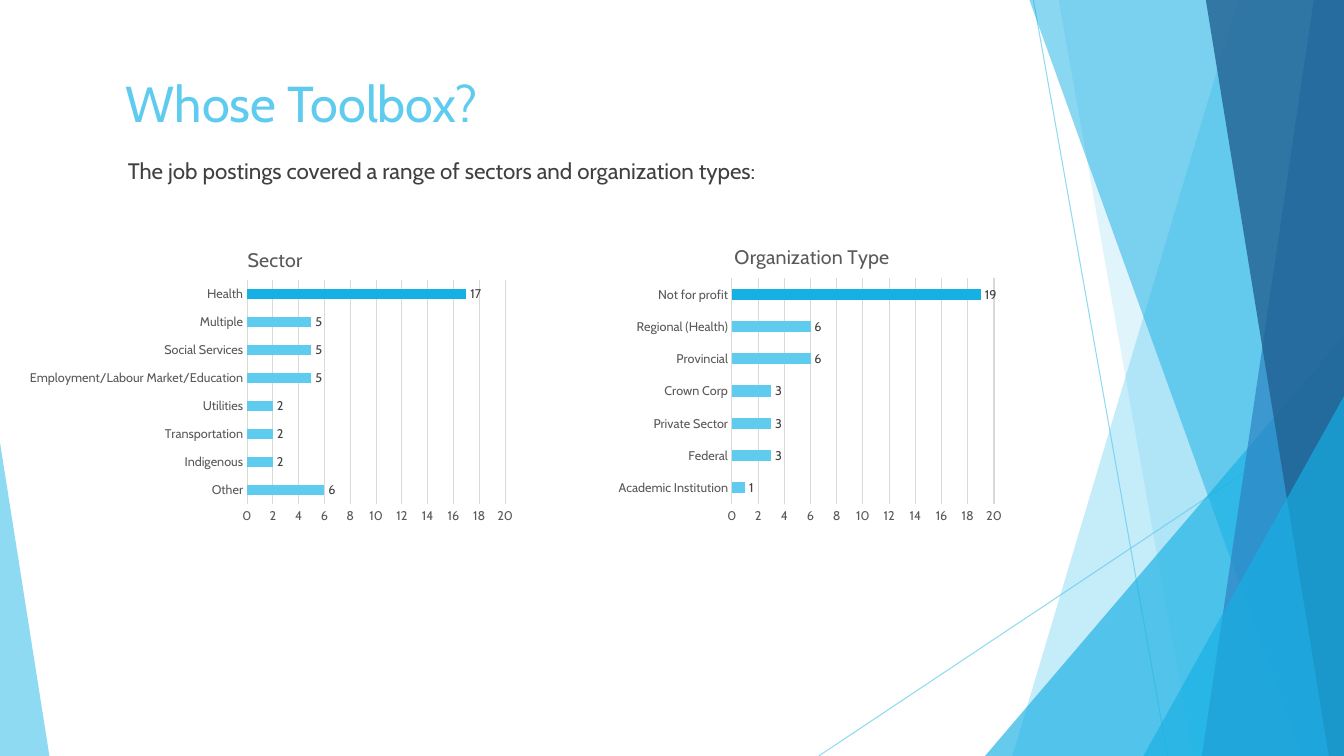
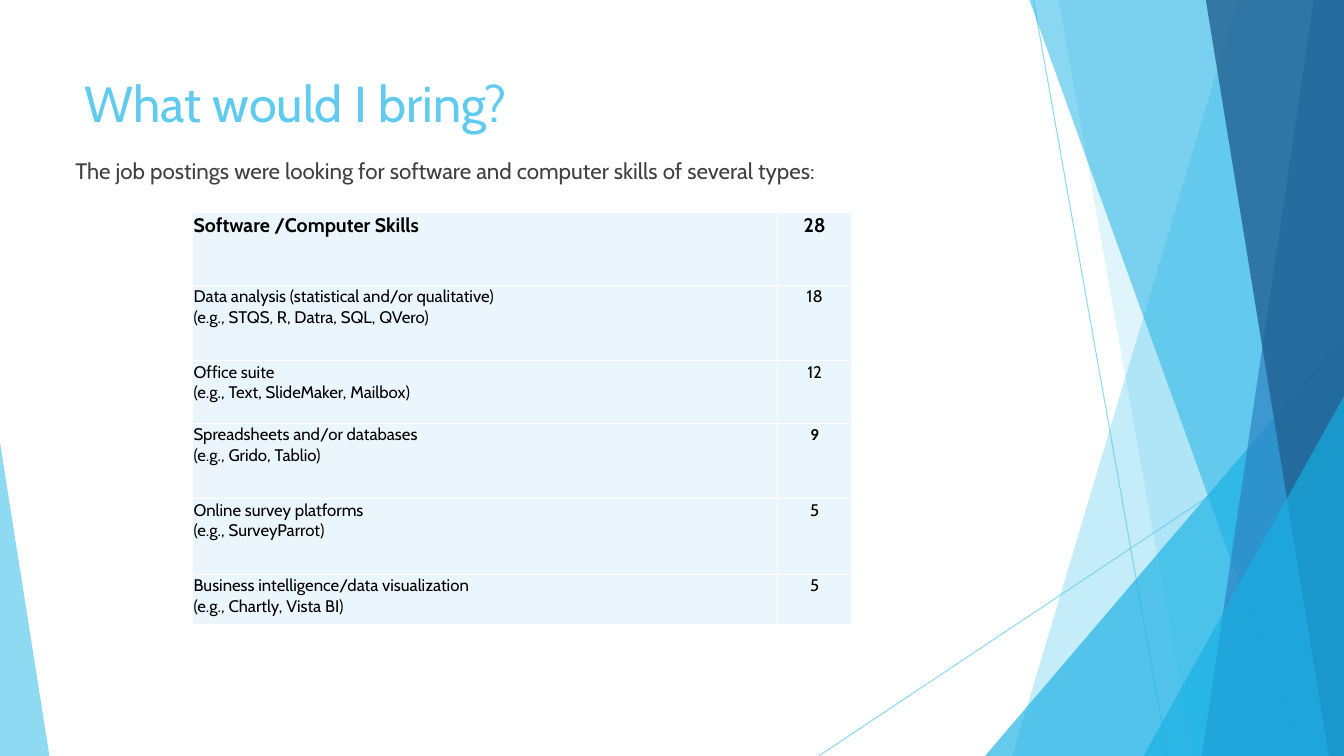
import dataclasses

import lxml.etree
import pptx
import pptx.chart.data
import pptx.dml.color
import pptx.enum.chart
import pptx.enum.shapes
import pptx.enum.text
import pptx.oxml.ns
import pptx.util

Inches = pptx.util.Inches
Pt = pptx.util.Pt
qn = pptx.oxml.ns.qn


@dataclasses.dataclass(frozen=True)
class Theme:
    width: float = 13.33
    height: float = 7.5
    font: str = "Cabin"
    number_font: str = "Calibri"
    sky: str = "5FCBEF"
    cyan: str = "17B0E4"
    blue: str = "2E83C3"
    navy: str = "226292"
    black: str = "000000"
    body: str = "404040"
    axis: str = "595959"
    grid: str = "D9D9D9"
    cell: str = "EAF6FC"
    white: str = "FFFFFF"
    title_size: int = 36
    lead_size: int = 16
    heading_size: int = 14
    table_size: int = 12
    chart_size: int = 9


def color(code):
    return pptx.dml.color.RGBColor.from_string(code)


def set_alpha(element, percent):
    for node in element.iter(qn("a:srgbClr")):
        lxml.etree.SubElement(node, qn("a:alpha"), val=str(percent * 1000))


def set_layout(parent, index, inner=False, **fractions):
    """Place a chart part by hand, in fractions of the chart's size."""
    layout = parent.find(qn("c:layout"))
    if layout is None:
        layout = lxml.etree.Element(qn("c:layout"))
        parent.insert(index, layout)
    manual = lxml.etree.SubElement(layout, qn("c:manualLayout"))
    if inner:
        lxml.etree.SubElement(manual, qn("c:layoutTarget"), val="inner")
    for name in ("xMode", "yMode"):
        lxml.etree.SubElement(manual, qn(f"c:{name}"), val="edge")
    for name, value in fractions.items():
        lxml.etree.SubElement(manual, qn(f"c:{name}"), val=f"{value:.4f}")


class Pages:
    """Holds the deck, its theme and the page being filled."""

    def __init__(self, theme):
        self.theme = theme
        self.deck = pptx.Presentation()
        self.deck.slide_width = Inches(theme.width)
        self.deck.slide_height = Inches(theme.height)
        self.page = None

    def start(self, title, title_left, lead, lead_left):
        theme = self.theme
        self.page = self.deck.slides.add_slide(self.deck.slide_layouts[6])
        self.backdrop()
        self.text(title, title_left, 0.67, 9.4, 1.44, theme.title_size, theme.sky)
        self.text(lead, lead_left, 1.51, 9, 0.37, theme.lead_size, theme.body)

    def backdrop(self):
        theme = self.theme
        right, bottom = theme.width, theme.height
        self.line(10.25, 0, 11.58, bottom)
        self.line(right, 4.03, 8.12, bottom)
        self.band(12.28, 10.04, theme.sky, 36)
        self.band(10.5, 11.83, theme.sky, 20)
        self.triangle(9.77, 3.33, right, 1, theme.cyan, 66)
        self.band(10.21, 12.91, theme.cyan, 50)
        self.band(13.03, 11.92, theme.blue, 70)
        self.band(11.96, 13.18, theme.navy, 80)
        self.triangle(11.34, 3.93, right, 1, theme.cyan, 66)
        self.triangle(0, 4.39, 0.49, 0, theme.sky, 70)

    def line(self, x1, y1, x2, y2):
        line = self.page.shapes.add_connector(
            pptx.enum.shapes.MSO_CONNECTOR.STRAIGHT,
            Inches(x1), Inches(y1), Inches(x2), Inches(y2))
        line.line.color.rgb = color(self.theme.sky)
        line.line.width = Pt(0.75)
        set_alpha(line.element, 70)
        lxml.etree.SubElement(line.element.spPr, qn("a:effectLst"))

    def band(self, top_x, bottom_x, fill, alpha):
        """Fill from a slanted edge to the right side of the page."""
        right, bottom = Inches(self.theme.width), Inches(self.theme.height)
        outline = self.page.shapes.build_freeform(Inches(top_x), 0)
        outline.add_line_segments(
            [(right, 0), (right, bottom), (Inches(bottom_x), bottom)], close=True)
        self.paint(outline.convert_to_shape(), fill, alpha)

    def triangle(self, left, top, right, apex, fill, alpha):
        """Stand a triangle on the bottom edge; apex runs from 0 to 1."""
        shape = self.page.shapes.add_shape(
            pptx.enum.shapes.MSO_SHAPE.ISOSCELES_TRIANGLE, Inches(left), Inches(top),
            Inches(right - left), Inches(self.theme.height - top))
        shape.adjustments[0] = apex
        self.paint(shape, fill, alpha)

    def paint(self, shape, fill, alpha):
        shape.shadow.inherit = False
        shape.fill.solid()
        shape.fill.fore_color.rgb = color(fill)
        shape.line.fill.background()
        set_alpha(shape.element, alpha)

    def style(self, font, size, code, bold=False, name=None):
        font.name = name or self.theme.font
        font.size = Pt(size)
        font.bold = bold
        font.color.rgb = color(code)

    def span(self, para, words, size, code, bold=False, name=None):
        span = para.add_run()
        span.text = words
        self.style(span.font, size, code, bold, name)

    def text(self, words, left, top, width, height, size, code):
        box = self.page.shapes.add_textbox(
            Inches(left), Inches(top), Inches(width), Inches(height))
        box.text_frame.word_wrap = True
        self.span(box.text_frame.paragraphs[0], words, size, code)

    def bar_chart(self, title, title_at, frame, plot, values):
        """Draw bars, top one first and highlighted; places are in page inches."""
        theme = self.theme
        left, top, width, height = frame
        data = pptx.chart.data.CategoryChartData()
        data.categories = list(values)[::-1]
        data.add_series("Series 1", list(values.values())[::-1])
        chart = self.page.shapes.add_chart(
            pptx.enum.chart.XL_CHART_TYPE.BAR_CLUSTERED,
            *(Inches(length) for length in frame), data).chart
        self.style(chart.font, theme.chart_size, theme.axis)
        chart.has_legend = False
        chart.has_title = True
        self.span(chart.chart_title.text_frame.paragraphs[0], title,
                  theme.heading_size, theme.axis)

        bars = chart.plots[0]
        bars.gap_width = 182
        bars.vary_by_categories = False
        series = bars.series[0]
        for part, code in ((series, theme.sky),
                           (series.points[len(values) - 1], theme.cyan)):
            part.format.fill.solid()
            part.format.fill.fore_color.rgb = color(code)
        bars.has_data_labels = True
        labels = bars.data_labels
        labels.show_value = True
        labels.position = pptx.enum.chart.XL_LABEL_POSITION.OUTSIDE_END
        self.style(labels.font, theme.chart_size, theme.body)

        for axis in (chart.category_axis, chart.value_axis):
            axis.major_tick_mark = pptx.enum.chart.XL_TICK_MARK.NONE
            axis.minor_tick_mark = pptx.enum.chart.XL_TICK_MARK.NONE
            self.style(axis.tick_labels.font, theme.chart_size, theme.axis)
        scale = chart.value_axis
        scale.minimum_scale, scale.maximum_scale, scale.major_unit = 0, 20, 2
        scale.has_major_gridlines = True
        scale.format.line.fill.background()
        for part in (chart.category_axis, scale.major_gridlines):
            part.format.line.color.rgb = color(theme.grid)
            part.format.line.width = Pt(0.75)

        body = chart.element.find(qn("c:chart"))
        set_layout(body.find(qn("c:title")), 1,
                   x=(title_at[0] - left) / width, y=(title_at[1] - top) / height)
        set_layout(body.find(qn("c:plotArea")), 0, inner=True,
                   x=(plot[0] - left) / width, y=(plot[1] - top) / height,
                   w=plot[2] / width, h=plot[3] / height)

    def table(self, left, top, columns, heights, rows):
        theme = self.theme
        table = self.page.shapes.add_table(
            len(rows), len(columns), Inches(left), Inches(top),
            Inches(sum(columns)), Inches(sum(heights))).table
        table.first_row = table.horz_banding = False
        for column, width in zip(table.columns, columns):
            column.width = Inches(width)
        for index, (height, (lines, count, bold_count)) in enumerate(zip(heights, rows)):
            table.rows[index].height = Inches(height)
            heading = index == 0
            size = theme.heading_size if heading else theme.table_size
            skill, number = table.cell(index, 0), table.cell(index, 1)
            self.fill_cell(skill, lines, size, heading)
            self.fill_cell(number, [count], size, heading or bold_count,
                           theme.number_font if bold_count else None)
            number.text_frame.paragraphs[0].alignment = pptx.enum.text.PP_ALIGN.CENTER

    def fill_cell(self, cell, lines, size, bold, name=None):
        cell.margin_left = cell.margin_right = cell.margin_top = Inches(0.01)
        cell.margin_bottom = 0
        frame = cell.text_frame
        for index, words in enumerate(lines):
            para = frame.add_paragraph() if index else frame.paragraphs[0]
            self.span(para, words, size, self.theme.black, bold, name)
        properties = cell._tc.get_or_add_tcPr()
        for side in ("lnL", "lnR", "lnT", "lnB"):
            border = lxml.etree.SubElement(properties, qn(f"a:{side}"), w=str(Pt(1)))
            fill = lxml.etree.SubElement(border, qn("a:solidFill"))
            lxml.etree.SubElement(fill, qn("a:srgbClr"), val=self.theme.white)
        cell.fill.solid()
        cell.fill.fore_color.rgb = color(self.theme.cell)


def main():
    pages = Pages(Theme())

    pages.start("Whose Toolbox?", 1.15,
                "The job postings covered a range of sectors and organization types:", 1.17)
    pages.bar_chart(
        "Sector", (2.42, 2.41), (0.2, 2.25, 5, 3), (2.45, 2.78, 2.56, 2.22),
        {"Health": 17, "Multiple": 5, "Social Services": 5,
         "Employment/Labour Market/Education": 5, "Utilities": 2,
         "Transportation": 2, "Indigenous": 2, "Other": 6})
    pages.bar_chart(
        "Organization Type", (7.25, 2.38), (6.06, 2.25, 3.96, 3), (7.26, 2.76, 2.6, 2.24),
        {"Not for profit": 19, "Regional (Health)": 6, "Provincial": 6,
         "Crown Corp": 3, "Private Sector": 3, "Federal": 3,
         "Academic Institution": 1})

    pages.start("What would I bring?", 0.74,
                "The job postings were looking for software and computer skills"
                " of several types:", 0.65)
    pages.table(1.91, 2.11, [5.8, 0.74], [0.72, 0.75, 0.62, 0.75, 0.75, 0.5], [
        (["Software /Computer Skills"], "28", False),
        (["Data analysis (statistical and/or qualitative)",
          "(e.g., STQS, R, Datra, SQL, QVero)"], "18", False),
        (["Office suite", "(e.g., Text, SlideMaker, Mailbox)"], "12", False),
        (["Spreadsheets and/or databases", "(e.g., Grido, Tablio)"], "9", True),
        (["Online survey platforms", "(e.g., SurveyParrot)"], "5", False),
        (["Business intelligence/data visualization",
          "(e.g., Chartly, Vista BI)"], "5", False),
    ])

    pages.deck.save("out.pptx")


if __name__ == "__main__":
    main()
